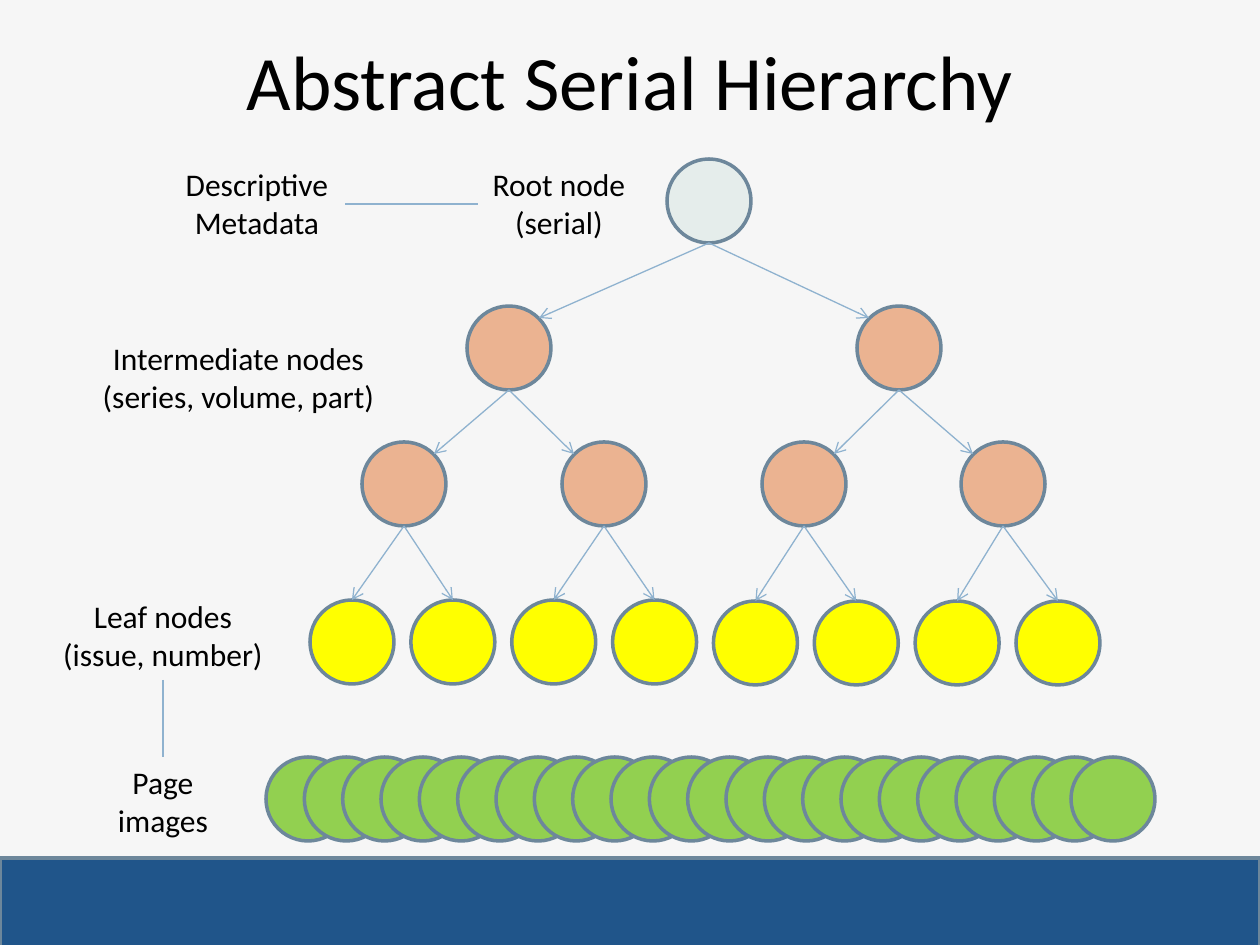
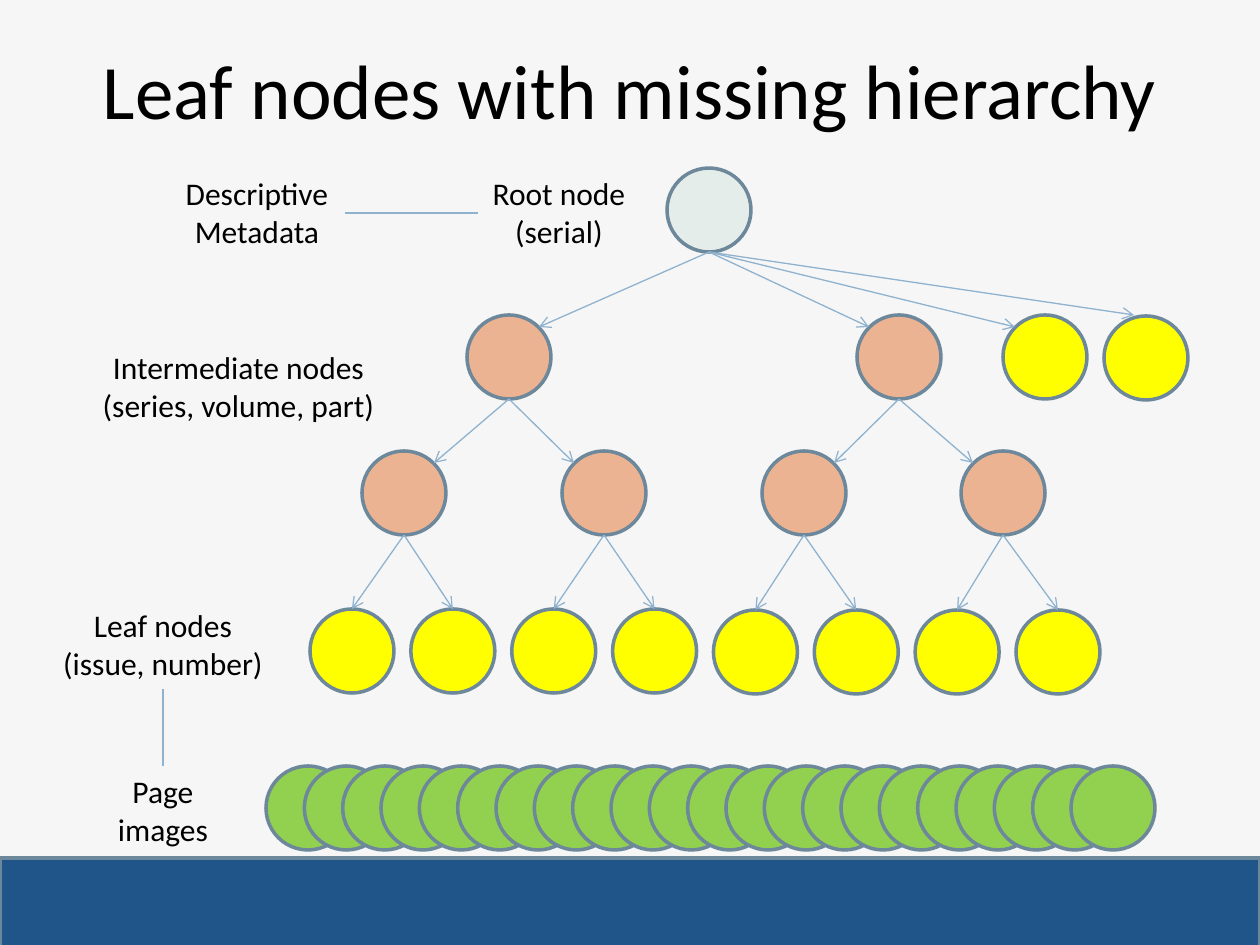
from lxml import etree
from pptx import Presentation
from pptx import util as u
from pptx.dml.color import RGBColor
from pptx.enum import shapes, text
from pptx.oxml import ns

SCALE = 914400 / 126  # EMU in one px
SLIDE_WIDTH, SLIDE_HEIGHT = 1260, 945
DIAMETER = 84
NEAR, FAR = 12, 72  # where the diagonals cross a node's outline
BACKGROUND, BAND, OUTLINE, ARROW, INK = "F6F6F6", "20558A", "6D879B", "8FB2CF", "000000"
ROOT, INTERMEDIATE, LEAF, PAGE = "E5EDEB", "EBB391", "FFFF00", "92D050"
FONT = "Calibri"

# Title, downward shift of the slide's content, and the leaves that hang
# directly from the root: (left, top, arrow entry within the node)
SLIDES = [
    ("Abstract Serial Hierarchy", 0, []),
    ("Leaf nodes with missing hierarchy", 9,
     [(1003, 306, (NEAR, NEAR)), (1104, 307, (30, -1))]),
]
TITLE_BOX = (63, 1, 1134, 158)
BAND_BOX = (0, 858, SLIDE_WIDTH, 97)

# Left, top, width of each label
LABEL_HEIGHT = 89
LABELS = [
    (["Descriptive", "Metadata"], 168, 159, 178),
    (["Root node", "(serial)"], 478, 159, 162),
    (["Intermediate nodes", "(series, volume, part)"], 84, 333, 309),
    (["Leaf nodes", "(issue, number)"], 42, 591, 242),
    (["Page images"], 82, 757, 162),
]
LABEL_LINKS = [((478, 204), (345, 204)), ((163, 680), (163, 757))]


def spread(first, last, count):
    """Return evenly spaced positions from first to last."""
    return [first + (last - first) * i / (count - 1) for i in range(count)]


LEAF_TOPS = [600] * 4 + [601] * 4
TREE = [  # one level per row: colour and node corners, two children per node
    (ROOT, [(667, 159)]),
    (INTERMEDIATE, [(467, 306), (857, 306)]),
    (INTERMEDIATE, [(left, 442) for left in (362, 562, 762, 961)]),
    (LEAF, list(zip(spread(310, 1016, 8), LEAF_TOPS))),
]
PAGES = [(left, 757) for left in spread(266, 1071, 22)]


def emu(*lengths):
    return [u.Emu(round(length * SCALE)) for length in lengths]


def color(value):
    return RGBColor.from_string(value)


def lower(point, shift):
    return point[0], point[1] + shift


def add_filled(slide, kind, box, fill):
    shape = slide.shapes.add_shape(kind, *emu(*box))
    shape.shadow.inherit = False
    shape.fill.solid()
    shape.fill.fore_color.rgb = color(fill)
    shape.line.color.rgb = color(OUTLINE)
    shape.line.width = u.Pt(2)


def add_node(slide, corner, fill):
    add_filled(slide, shapes.MSO_SHAPE.OVAL, (*corner, DIAMETER, DIAMETER), fill)


def add_line(slide, start, end, arrow=False):
    connector = slide.shapes.add_connector(
        shapes.MSO_CONNECTOR.STRAIGHT, *emu(*start, *end))
    connector.line.color.rgb = color(ARROW)
    connector.line.width = u.Pt(0.75)
    properties = connector.element.spPr
    if arrow:
        outline = properties.find(ns.qn("a:ln"))
        etree.SubElement(outline, ns.qn("a:tailEnd"), type="arrow")
    etree.SubElement(properties, ns.qn("a:effectLst"))


def add_arrow(slide, parent, child, entry):
    """Point from the bottom of the parent to the entry point of the child."""
    start = parent[0] + DIAMETER / 2, parent[1] + DIAMETER
    end = child[0] + entry[0], child[1] + entry[1]
    add_line(slide, start, end, arrow=True)


def write(shape, lines, size, **frame_format):
    frame = shape.text_frame
    for name, value in frame_format.items():
        setattr(frame, name, value)
    frame.text = "\n".join(lines)
    for paragraph in frame.paragraphs:
        paragraph.alignment = text.PP_ALIGN.CENTER
        for name, value in {"name": FONT, "size": u.Pt(size)}.items():
            setattr(paragraph.font, name, value)
        paragraph.font.color.rgb = color(INK)


def add_title(slide, title, shift):
    shape = slide.shapes.title
    left, top, width, height = TITLE_BOX
    box = emu(left, top + shift, width, height)
    for name, value in zip(("left", "top", "width", "height"), box):
        setattr(shape, name, value)
    write(shape, [title], 44, vertical_anchor=text.MSO_ANCHOR.MIDDLE)


def add_tree(slide, shift):
    levels = [(fill, [lower(corner, shift) for corner in corners])
              for fill, corners in TREE]
    for fill, corners in levels:
        for corner in corners:
            add_node(slide, corner, fill)
    for (_, parents), (fill, children) in zip(levels, levels[1:]):
        for i, child in enumerate(children):
            if fill == LEAF:
                entry = DIAMETER / 2, 0
            else:
                entry = (NEAR if i % 2 else FAR), NEAR
            add_arrow(slide, parents[i // 2], child, entry)


def add_labels(slide, shift):
    for lines, left, top, width in LABELS:
        box = slide.shapes.add_textbox(*emu(left, top + shift, width, LABEL_HEIGHT))
        write(box, lines, 18, word_wrap=True,
              auto_size=text.MSO_AUTO_SIZE.SHAPE_TO_FIT_TEXT)
    for start, end in LABEL_LINKS:
        add_line(slide, lower(start, shift), lower(end, shift))


def add_root_leaves(slide, leaves, shift):
    root = lower(TREE[0][1][0], shift)
    for left, top, entry in leaves:
        corner = left, top + shift
        add_node(slide, corner, LEAF)
        add_arrow(slide, root, corner, entry)


def main():
    presentation = Presentation()
    presentation.slide_width, presentation.slide_height = emu(SLIDE_WIDTH, SLIDE_HEIGHT)
    background = presentation.slide_master.background.fill
    background.solid()
    background.fore_color.rgb = color(BACKGROUND)
    title_only = presentation.slide_layouts.get_by_name("Title Only")
    for title, shift, root_leaves in SLIDES:
        slide = presentation.slides.add_slide(title_only)
        add_filled(slide, shapes.MSO_SHAPE.RECTANGLE, BAND_BOX, BAND)
        add_title(slide, title, shift)
        add_tree(slide, shift)
        add_labels(slide, shift)
        for corner in PAGES:
            add_node(slide, lower(corner, shift), PAGE)
        add_root_leaves(slide, root_leaves, shift)
    presentation.save("out.pptx")


if __name__ == "__main__":
    main()
